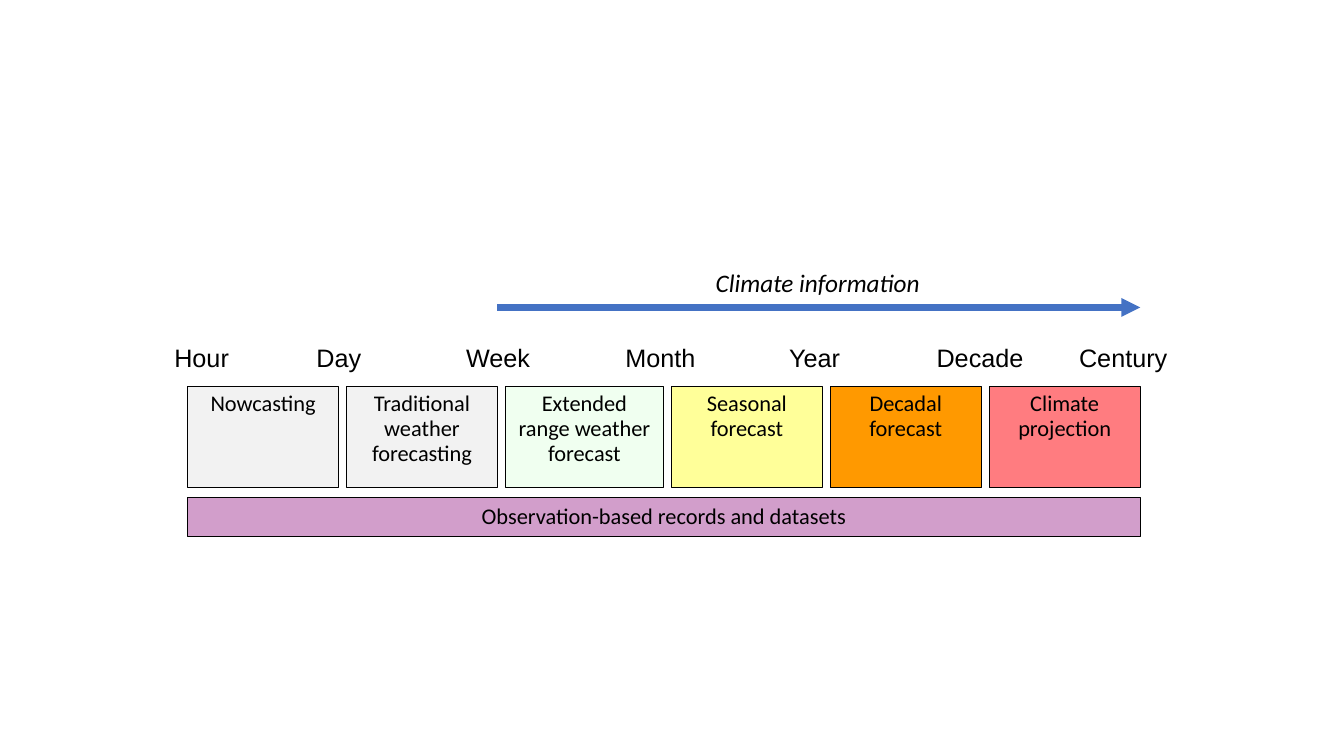
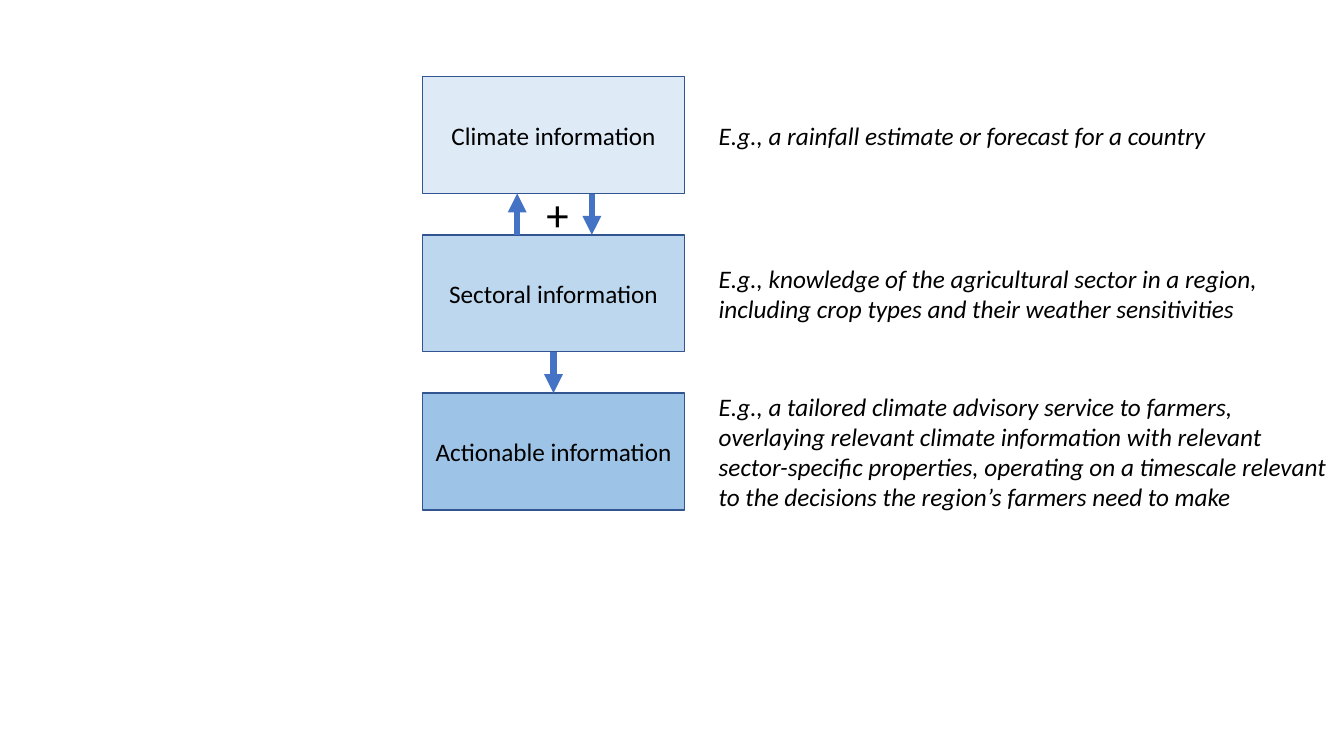
import lxml.etree
import pptx
import pptx.dml.color
import pptx.enum.shapes
import pptx.enum.text
import pptx.oxml.ns
import pptx.util

Inches = pptx.util.Inches
ANCHOR = pptx.enum.text.MSO_ANCHOR
ALIGN = pptx.enum.text.PP_ALIGN

INK = "000000"
ARROW_BLUE = "4472C4"
BOX_EDGE = "325491"


def colour(hex_text):
    return pptx.dml.color.RGBColor.from_string(hex_text)


def apply_format(target, values):
    for name, value in values.items():
        setattr(target, name, value)


class Diagram:
    """Holds the deck, its style and the slide being drawn."""

    def __init__(self):
        self.deck = pptx.Presentation()
        self.deck.slide_width = Inches(13.33)
        self.deck.slide_height = Inches(7.5)
        self.page = None

    def new_page(self):
        self.page = self.deck.slides.add_slide(self.deck.slide_layouts[6])

    def set_text(self, box, text, font, align, anchor, spacing=None,
                 wrap=True):
        frame = box.text_frame
        apply_format(frame, {"word_wrap": wrap, "vertical_anchor": anchor})
        para = frame.paragraphs[0]
        apply_format(para, {"alignment": align, "line_spacing": spacing})
        span = para.add_run()
        span.text = text
        style = {"name": "Calibri", "size": pptx.util.Pt(18), **font}
        apply_format(span.font, style)
        span.font.color.rgb = colour(INK)

    def box(self, area, text, fill, edge=INK, weight=0.75, size=16,
            anchor=ANCHOR.MIDDLE, spacing=0.93):
        box = self.page.shapes.add_shape(
            pptx.enum.shapes.MSO_SHAPE.RECTANGLE, *map(Inches, area))
        box.shadow.inherit = False
        box.fill.solid()
        box.fill.fore_color.rgb = colour(fill)
        box.line.color.rgb = colour(edge)
        box.line.width = pptx.util.Pt(weight)
        self.set_text(box, text, {"size": pptx.util.Pt(size)}, ALIGN.CENTER,
                      anchor, spacing)
        return box

    def label(self, area, text, align=ALIGN.LEFT, wrap=False, **font):
        box = self.page.shapes.add_textbox(*map(Inches, area))
        self.set_text(box, text, font, align, ANCHOR.TOP, wrap=wrap)

    def arrow(self, start, end):
        arrow = self.page.shapes.add_connector(
            pptx.enum.shapes.MSO_CONNECTOR.STRAIGHT,
            *map(Inches, (*start, *end)))
        arrow.line.color.rgb = colour(ARROW_BLUE)
        arrow.line.width = pptx.util.Pt(4.5)
        qn = pptx.oxml.ns.qn
        properties = arrow._element.spPr
        outline = properties.find(qn("a:ln"))
        lxml.etree.SubElement(outline, qn("a:tailEnd"), type="triangle")
        lxml.etree.SubElement(properties, qn("a:effectLst"))
        return arrow


def draw_timescales(diagram):
    diagram.new_page()
    left, total = 1.86, 9.45
    right = left + total
    forecasts = [
        ("Nowcasting", "F2F2F2", 1.5),
        ("Traditional weather forecasting", "F2F2F2", 1.5),
        ("Extended range weather forecast", "F0FFF0", 1.57),
        ("Seasonal forecast", "FFFF99", 1.5),
        ("Decadal forecast", "FF9900", 1.5),
        ("Climate projection", "FF7C80", 1.5),
    ]
    widths = [width for _, _, width in forecasts]
    gap = (total - sum(widths)) / (len(widths) - 1)
    box_left = left
    for text, fill, width in forecasts:
        diagram.box((box_left, 3.83, width, 1.01), text, fill,
                    anchor=ANCHOR.TOP)
        box_left += width + gap
    diagram.box((left, 4.94, total, 0.38),
                "Observation-based records and datasets", "D29ECB")

    label_width = 1.1
    timescales = [("Hour", 2), ("Day", 3.36), ("Week", 4.94),
                  ("Month", 6.55), ("Year", 8.08), ("Decade", 9.72),
                  ("Century", 11.14)]
    for text, centre in timescales:
        diagram.label((centre - label_width / 2, 3.35, label_width, 0.4),
                      text, ALIGN.CENTER, name="Arial")

    diagram.arrow((4.93, 3.05), (right, 3.05))
    diagram.label((7, 2.6, 2.25, 0.4), "Climate information", italic=True)


def draw_information_flow(diagram):
    diagram.new_page()
    left, top, width, height, pitch = 4.19, 0.76, 2.6, 1.16, 1.57
    stages = [
        ("Climate information", "DEEBF7", (1.14, 6.13, 0.4),
         "E.g., a rainfall estimate or forecast for a country"),
        ("Sectoral information", "BDD7EE", (2.56, 6.13, 0.71),
         "E.g., knowledge of the agricultural sector in a region, "
         "including crop types and their weather sensitivities"),
        ("Actionable information", "9DC3E6", (3.83, 6.3, 1.31),
         "E.g., a tailored climate advisory service to farmers, "
         "overlaying relevant climate information with relevant "
         "sector-specific properties, operating on a timescale relevant "
         "to the decisions the region’s farmers need to make"),
    ]
    boxes = []
    for row, (name, fill, example_area, example) in enumerate(stages):
        boxes.append(diagram.box(
            (left, top + row * pitch, width, height), name, fill,
            edge=BOX_EDGE, weight=1, size=18, spacing=None))
        diagram.label((7.03, *example_area), example, wrap=True, italic=True)

    upper, lower = top + height, top + pitch
    diagram.arrow((5.13, lower), (5.13, upper))
    diagram.arrow((5.87, upper), (5.87, lower))
    diagram.label((5.32, 1.8, 0.43, 0.64), "+", size=pptx.util.Pt(32))

    centre = left + width / 2
    outcome = diagram.arrow((centre, upper + pitch), (centre, lower + pitch))
    outcome.begin_connect(boxes[1], 2)
    outcome.end_connect(boxes[2], 0)


def main():
    diagram = Diagram()
    draw_timescales(diagram)
    draw_information_flow(diagram)
    diagram.deck.save("out.pptx")


if __name__ == "__main__":
    main()
